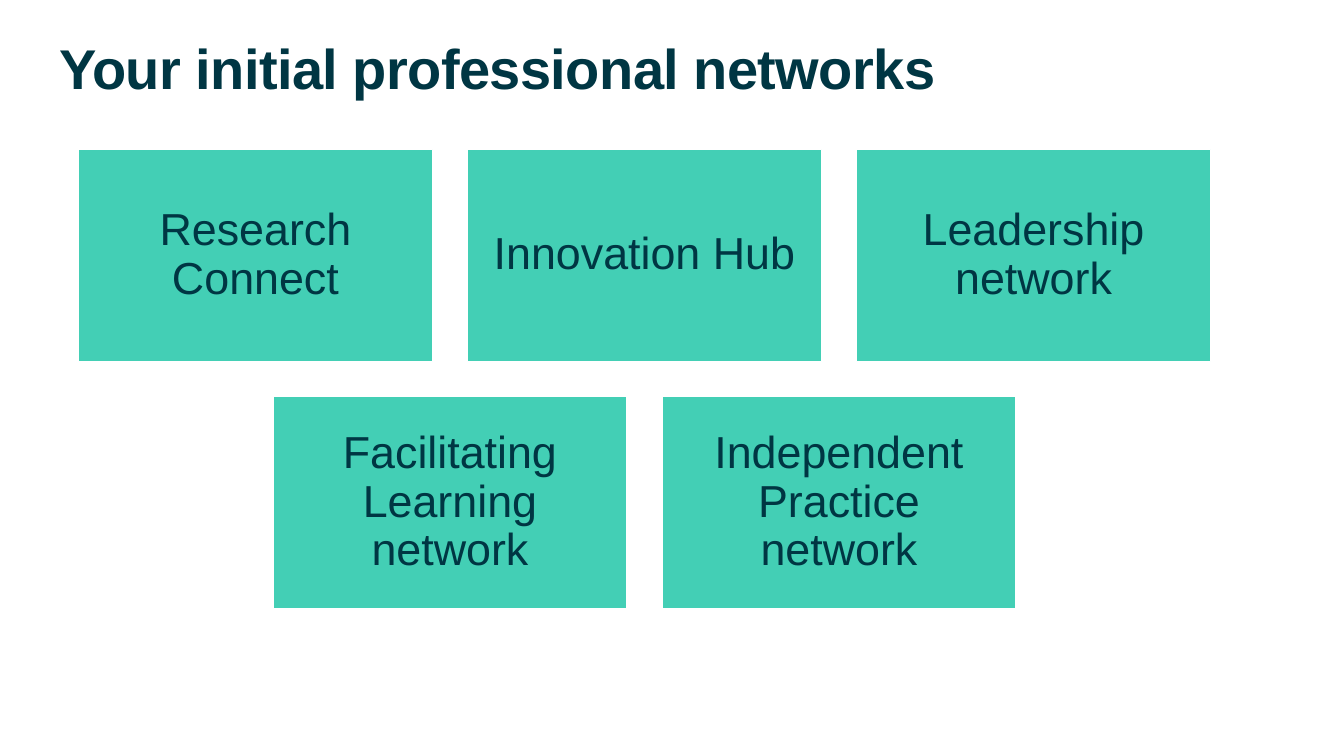
import pptx
import pptx.util
import pptx.dml.color
import pptx.enum.shapes
import pptx.enum.text

Pt = pptx.util.Pt


def color(hex_code):
    return pptx.dml.color.RGBColor.from_string(hex_code)


def write_text(frame, text, *, size, ink, font="Arial", bold=False, align="LEFT",
               anchor="TOP", inset=0, line_spacing=0.9, tracking=None):
    frame.word_wrap = True
    frame.auto_size = pptx.enum.text.MSO_AUTO_SIZE.NONE
    frame.vertical_anchor = pptx.enum.text.MSO_ANCHOR[anchor]
    frame.margin_left = frame.margin_right = Pt(inset)
    frame.margin_top = frame.margin_bottom = Pt(inset)
    paragraph = frame.paragraphs[0]
    paragraph.alignment = pptx.enum.text.PP_ALIGN[align]
    paragraph.line_spacing = line_spacing
    run = paragraph.add_run()
    run.text = text
    run.font.name = font
    run.font.size = Pt(size)
    run.font.bold = bold
    run.font.color.rgb = color(ink)
    if tracking is not None:
        run.font._element.set("spc", str(round(tracking * 100)))


class NetworkSlide:
    INK = "003643"
    TILE_FILL = "43CFB5"
    TILE_LINE = "FFFFFF"

    def __init__(self, deck):
        self.slide = deck.slides.add_slide(deck.slide_layouts[5])

    def title(self, text, left, top, width, height):
        heading = self.slide.shapes.title
        heading.left, heading.top = Pt(left), Pt(top)
        heading.width, heading.height = Pt(width), Pt(height)
        write_text(heading.text_frame, text, size=40, ink=self.INK, bold=True,
                   tracking=-0.4)

    def tile(self, text, left, top, width, height):
        network = self.slide.shapes.add_shape(
            pptx.enum.shapes.MSO_SHAPE.RECTANGLE,
            Pt(left), Pt(top), Pt(width), Pt(height))
        network.shadow.inherit = False
        network.fill.solid()
        network.fill.fore_color.rgb = color(self.TILE_FILL)
        network.line.color.rgb = color(self.TILE_LINE)
        network.line.width = Pt(1)
        write_text(network.text_frame, text, size=32, ink=self.INK,
                   align="CENTER", anchor="MIDDLE", inset=9.6)

    def centered_rows(self, rows, center, top, width, height, gap):
        for row_index, names in enumerate(rows):
            row_width = len(names) * (width + gap) - gap
            for column, name in enumerate(names):
                self.tile(name, center - row_width / 2 + column * (width + gap),
                          top + row_index * (height + gap), width, height)


def main():
    deck = pptx.Presentation()
    deck.slide_width, deck.slide_height = Pt(960), Pt(540)
    page = NetworkSlide(deck)

    # Heading
    page.title("Your initial professional networks", 42.5, 29.5, 878.4, 56.9)

    # Networks, each row centred
    networks = [
        ["Research Connect", "Innovation Hub", "Leadership network"],
        ["Facilitating Learning network", "Independent Practice network"],
    ]
    page.centered_rows(networks, center=460.4, top=106.6, width=252.7,
                       height=151.6, gap=25.2)

    deck.save("out.pptx")


if __name__ == "__main__":
    main()
